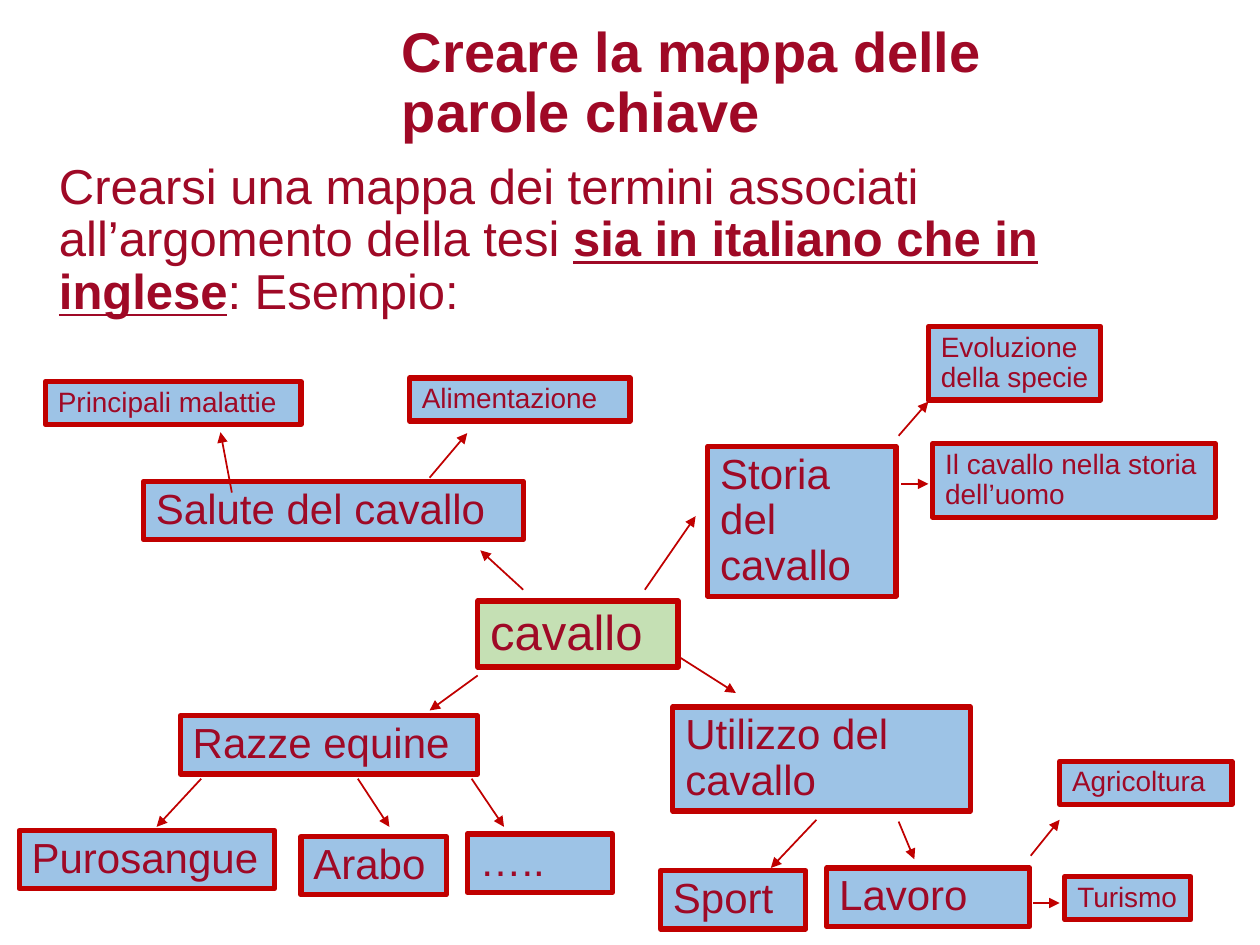
from dataclasses import dataclass

from lxml.etree import SubElement
from pptx import Presentation
from pptx.dml.color import RGBColor
from pptx.enum.shapes import MSO_CONNECTOR as Connector, MSO_SHAPE as Shape
from pptx.enum.text import MSO_ANCHOR as Anchor, MSO_AUTO_SIZE as AutoSize, PP_ALIGN as Align
from pptx.oxml.ns import qn
from pptx.util import Pt


@dataclass(frozen=True)
class Theme:
    font: str = "Arial"
    text: RGBColor = RGBColor(0x9F, 0x09, 0x26)
    outline: RGBColor = RGBColor(0xC0, 0x00, 0x00)
    topic: RGBColor = RGBColor(0xC5, 0xE0, 0xB4)
    branch: RGBColor = RGBColor(0x9D, 0xC3, 0xE6)
    title_size: int = 32
    body_size: int = 28
    branch_size: int = 24
    leaf_size: int = 16


theme = Theme()


def format_text(shape, size, anchor, auto_size):
    frame = shape.text_frame
    frame.word_wrap = True
    frame.auto_size = auto_size
    frame.vertical_anchor = anchor
    paragraph = frame.paragraphs[0]
    paragraph.alignment = Align.LEFT
    paragraph.line_spacing = 0.9
    paragraph.space_before = Pt(0)
    paragraph.font.name = theme.font
    paragraph.font.size = Pt(size)
    paragraph.font.color.rgb = theme.text
    return paragraph


def place(shape, left, top, width, height):
    shape.left, shape.top = Pt(left), Pt(top)
    shape.width, shape.height = Pt(width), Pt(height)


presentation = Presentation()
presentation.slide_width = Pt(720)
presentation.slide_height = Pt(540)
slide = presentation.slides.add_slide(presentation.slide_layouts[1])

title = slide.shapes.title
place(title, 222.5, 29.5, 443, 57)
title.text_frame.text = "Creare la mappa delle parole chiave"
format_text(title, theme.title_size, Anchor.BOTTOM, AutoSize.NONE).font.bold = True

body = slide.placeholders[1]
place(body, 26.5, 88.5, 669, 98.5)
paragraph = body.text_frame.paragraphs[0]
properties = paragraph._p.get_or_add_pPr()
properties.set("marL", "0")
properties.set("indent", "0")
SubElement(properties, qn("a:buNone"))
for text, emphasis in [
    ("Crearsi una mappa dei termini associati all’argomento della tesi ", False),
    ("sia in italiano che in inglese", True),
    (": Esempio:", False),
]:
    run = paragraph.add_run()
    run.text = text
    run.font.bold = emphasis
    run.font.underline = emphasis
format_text(body, theme.body_size, Anchor.MIDDLE, AutoSize.SHAPE_TO_FIT_TEXT)

topics = [("cavallo", 273, 343.5, 114.5, 1)]
branches = [
    ("Salute del cavallo", 82, 275, 217, 1),
    ("Storia del cavallo", 404.5, 255, 107.5, 3),
    ("Razze equine", 103, 409, 170, 1),
    ("Utilizzo del cavallo", 384.5, 404, 170, 2),
    ("Purosangue", 11, 474.5, 146, 1),
    ("Arabo", 172, 478, 83, 1),
    ("…..", 267, 476.5, 83, 1),
    ("Sport", 377.5, 497.5, 83, 1),
    ("Lavoro", 472.5, 496, 116, 1),
]
leaves = [
    ("Principali malattie", 26, 218, 146, 1),
    ("Alimentazione", 234, 216, 126, 1),
    ("Evoluzione della specie", 530.5, 186.5, 98.5, 2),
    ("Il cavallo nella storia dell’uomo", 533, 253.5, 161.5, 2),
    ("Agricoltura", 605.5, 435, 98.5, 1),
    ("Turismo", 608.5, 501, 72, 1),
]
for boxes, fill, size in [
    (topics, theme.topic, theme.body_size),
    (branches, theme.branch, theme.branch_size),
    (leaves, theme.branch, theme.leaf_size),
]:
    for text, left, top, width, lines in boxes:
        height = 7.2 + 1.09 * size * lines
        box = slide.shapes.add_shape(Shape.RECTANGLE, Pt(left), Pt(top), Pt(width), Pt(height))
        box.shadow.inherit = False
        box.fill.solid()
        box.fill.fore_color.rgb = fill
        box.line.color.rgb = theme.outline
        box.line.width = Pt(3)
        box.text_frame.text = text
        format_text(box, size, Anchor.MIDDLE, AutoSize.SHAPE_TO_FIT_TEXT)

arrows = [
    (299, 337, 274.5, 314.5),
    (368.5, 337, 397.5, 295),
    (273, 386, 245.5, 406),
    (389, 376, 420.5, 396),
    (132.5, 281.5, 126, 247),
    (245.5, 273, 267, 247.5),
    (513.5, 249, 530.5, 229.5),
    (515, 276.5, 530.5, 276.5),
    (115, 445, 89.5, 472.5),
    (204.5, 445, 222.5, 472.5),
    (269.5, 445, 288, 472.5),
    (466.5, 468.5, 440.5, 496),
    (513.5, 469.5, 522.5, 491),
    (589, 489, 605.5, 468.5),
    (590.5, 516, 605.5, 516),
]
for points in arrows:
    arrow = slide.shapes.add_connector(Connector.STRAIGHT, *map(Pt, points))
    arrow.line.color.rgb = theme.outline
    arrow.line.width = Pt(1)
    SubElement(arrow.line._get_or_add_ln(), qn("a:tailEnd"), type="triangle")
    SubElement(arrow._element.spPr, qn("a:effectLst"))

presentation.save("out.pptx")
